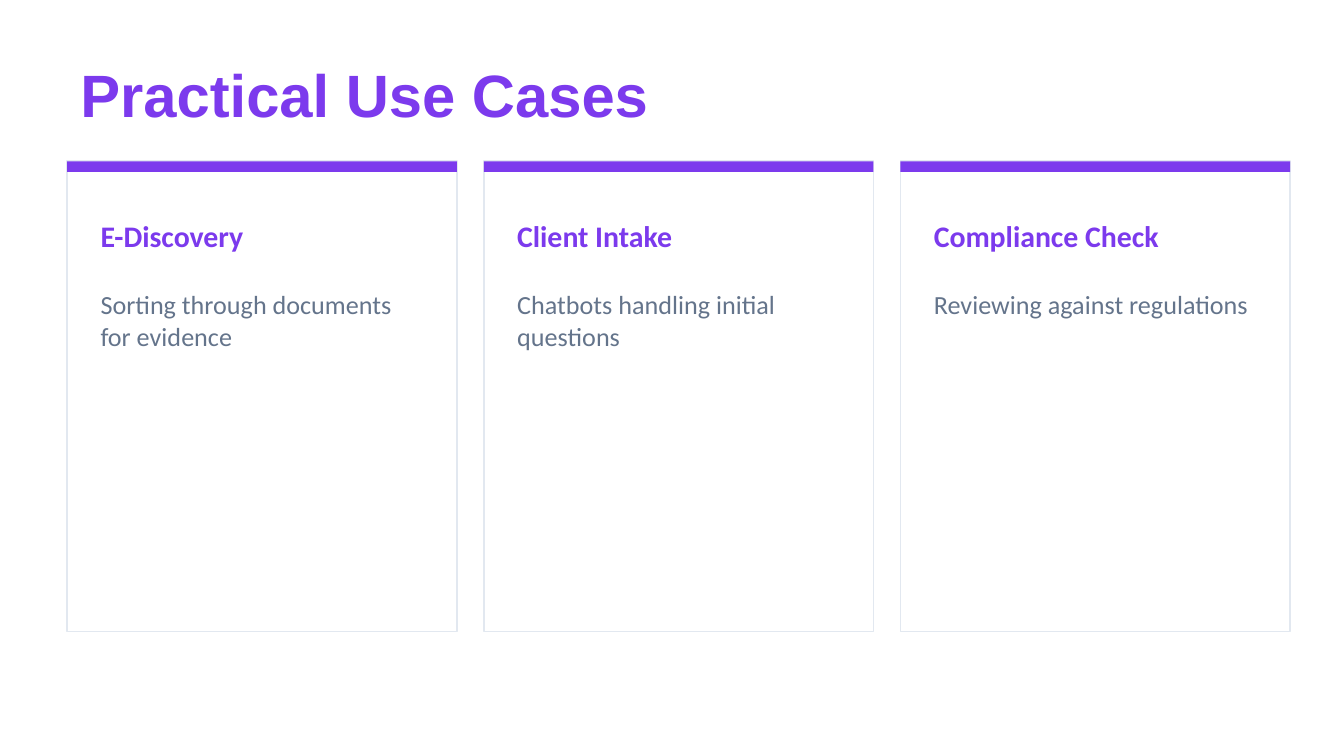
from pptx import Presentation
from pptx.dml.color import RGBColor
from pptx.enum.shapes import MSO_SHAPE as Shape
from pptx.enum.text import MSO_ANCHOR as Anchor
from pptx.util import Inches, Pt

PURPLE = "7C3AED"
SLATE = "64748B"
BORDER = "E2E8F0"
WHITE = "FFFFFF"


def paint(target, color):
    target.solid()
    target.fore_color.rgb = RGBColor.from_string(color)


def write(text, left, top, width, height, size, font, color, bold, anchor):
    box = slide.shapes.add_textbox(Inches(left), Inches(top), Inches(width), Inches(height))
    frame = box.text_frame
    frame.word_wrap = True
    frame.vertical_anchor = anchor
    run = frame.paragraphs[0].add_run()
    run.text = text
    run.font.size = Pt(size)
    run.font.name = font
    run.font.bold = bold
    paint(run.font.fill, color)


prs = Presentation()
prs.slide_width = Inches(10)
prs.slide_height = Inches(10 * 9 / 16)
slide = prs.slides.add_slide(prs.slide_layouts[6])
paint(slide.background.fill, WHITE)

write("Practical Use Cases", 0.5, 0.4, 9, 0.6, 32, "Arial", PURPLE, True, Anchor.MIDDLE)

use_cases = [
    ("E-Discovery", "Sorting through documents for evidence"),
    ("Client Intake", "Chatbots handling initial questions"),
    ("Compliance Check", "Reviewing against regulations"),
]
card_width, gap, inset = 2.9, 0.2, 0.15
text_width = card_width - 2 * inset

for index, (heading, description) in enumerate(use_cases):
    left = 0.5 + index * (card_width + gap)

    for height, color in ((3.5, WHITE), (0.08, PURPLE)):
        panel = slide.shapes.add_shape(
            Shape.RECTANGLE, Inches(left), Inches(1.2), Inches(card_width), Inches(height))
        panel.shadow.inherit = False
        paint(panel.fill, color)
        if color == WHITE:
            paint(panel.line.fill, BORDER)
            panel.line.width = Pt(1)
        else:
            panel.line.fill.background()

    write(heading, left + inset, 1.5, text_width, 0.5, 16, "Calibri", PURPLE, True, Anchor.MIDDLE)
    write(description, left + inset, 2.1, text_width, 2.4, 14, "Calibri", SLATE, False, Anchor.TOP)

prs.save("out.pptx")
